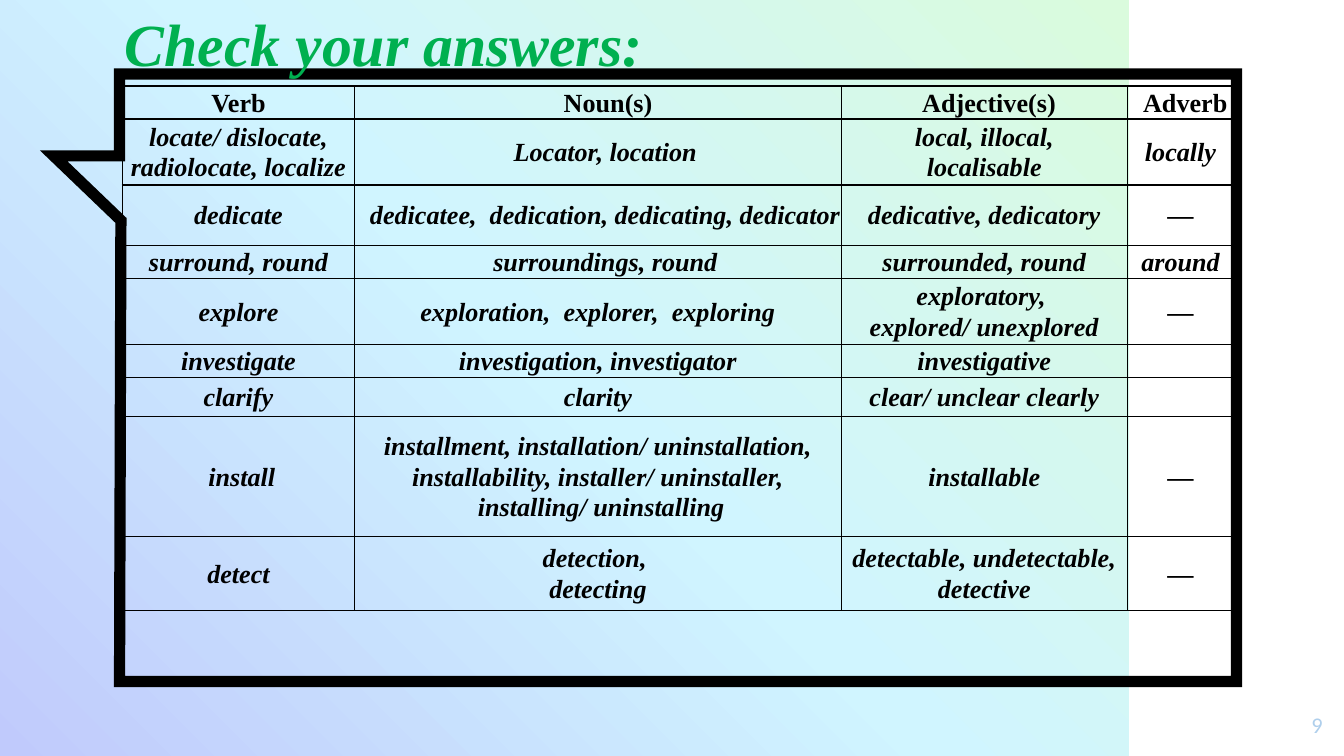
from copy import deepcopy
from dataclasses import dataclass

from lxml.etree import SubElement
from pptx import Presentation
from pptx.dml.color import RGBColor
from pptx.enum.shapes import MSO_SHAPE
from pptx.enum.text import MSO_ANCHOR, MSO_AUTO_SIZE, PP_ALIGN
from pptx.oxml import parse_xml
from pptx.oxml.ns import nsdecls, qn
from pptx.util import Inches, Pt

WIDTH = Inches(10)
HEIGHT = WIDTH * 9 // 16


@dataclass(frozen=True)
class Theme:
    gradient: tuple = ("C0CAFC", "D0F5FF", "DAFBDD")
    ink: str = "000000"
    title: str = "00B050"
    number: str = "AFCFEC"
    serif: str = "Times New Roman"
    sans: str = "Calibri"
    title_size: int = 32
    cell_size: int = 14
    number_size: int = 12
    frame_line: float = 6
    cell_line: float = 0.75


THEME = Theme()


@dataclass(frozen=True)
class Box:
    """A region in percent of the slide's width and height."""
    left: float
    top: float
    width: float
    height: float

    def point(self, x, y):
        return (round(WIDTH * (self.left + x * self.width) / 100),
                round(HEIGHT * (self.top + y * self.height) / 100))

    def frame(self):
        return (*self.point(0, 0),
                round(WIDTH * self.width / 100), round(HEIGHT * self.height / 100))


# Column widths and row heights, as weights within the table's box
COLUMNS = (1.73, 3.62, 2.13, 0.79)
ROWS = (0.24, 0.49, 0.45, 0.24, 0.49, 0.24, 0.29, 0.89, 0.55)
PADDED_ROWS = (7, 8)
INDENTS = {(0, 1): 0.15, (0, 2): 0.07, (0, 3): 0.07,
           (1, 1): 0.11, (2, 1): 0.11, (3, 1): 0.11}
ANSWERS = (
    ("Verb", "Noun(s)", "Adjective(s)", "Adverb"),
    ("locate/ dislocate, radiolocate, localize", "Locator, location",
     "local, illocal,\nlocalisable", "locally"),
    ("dedicate", "dedicatee,  dedication, dedicating, dedicator",
     "dedicative, dedicatory", "—"),
    ("surround, round", "surroundings, round", "surrounded, round", "around"),
    ("explore", "exploration,  explorer,  exploring",
     "exploratory, \nexplored/ unexplored", "—"),
    ("investigate", "investigation, investigator", "investigative", ""),
    ("clarify", "clarity", "clear/ unclear clearly", ""),
    (" install", "installment, installation/ uninstallation, installability, "
     "installer/ uninstaller,\n installing/ uninstalling", "installable", "—"),
    ("detect", "detection, \ndetecting", "detectable, undetectable, detective", "—"),
)


def color(value):
    return RGBColor.from_string(value)


def style(paragraph, face, size, ink, bold=False, italic=False):
    font = paragraph.font
    font.name, font.size = face, Pt(size)
    font.bold, font.italic = bold, italic
    font.color.rgb = color(ink)


def add_backdrop(slide, box):
    shape = slide.shapes.add_shape(MSO_SHAPE.RECTANGLE, *box.frame())
    shape.shadow.inherit = False
    shape.line.fill.background()
    shape.fill.gradient()
    shape.fill.gradient_angle = 45
    # The default gradient has two stops; add one for the middle colour
    stops = shape.fill._fill._gradFill.find(qn("a:gsLst"))
    stops.append(deepcopy(stops[-1]))
    for index, stop in enumerate(shape.fill.gradient_stops):
        stop.position = index / 2
        stop.color.rgb = color(THEME.gradient[index])


def add_callout(slide, box):
    # Corners on a grid of 880 columns and 452 rows
    columns, rows = 880, 452
    body, tail, joint = 49, 61, 109
    corners = ((body, 0), (columns, 0), (columns, rows), (body, rows),
               (body + 1, joint), (0, tail), (body, tail))
    points = [box.point(x / columns, y / rows) for x, y in corners]
    builder = slide.shapes.build_freeform(*points[0])
    builder.add_line_segments(points[1:], close=True)
    shape = builder.convert_to_shape()
    shape.shadow.inherit = False
    shape.fill.background()
    shape.line.width = Pt(THEME.frame_line)
    shape.line.color.rgb = color(THEME.ink)
    SubElement(shape.line._ln, qn("a:miter")).set("lim", "800000")


def add_label(slide, box, text, align, **font):
    frame = slide.shapes.add_textbox(*box.frame()).text_frame
    frame.text = text
    paragraph = frame.paragraphs[0]
    paragraph.alignment = align
    style(paragraph, **font)
    return frame


def add_title(slide, box):
    frame = add_label(slide, box, "Check your answers:", PP_ALIGN.LEFT,
                      face=THEME.serif, size=THEME.title_size,
                      ink=THEME.title, bold=True, italic=True)
    frame.word_wrap = False
    frame.auto_size = MSO_AUTO_SIZE.SHAPE_TO_FIT_TEXT
    frame.vertical_anchor = MSO_ANCHOR.MIDDLE


def add_number(slide, box):
    frame = add_label(slide, box, "9", PP_ALIGN.RIGHT, face=THEME.sans,
                      size=THEME.number_size, ink=THEME.number)
    frame.word_wrap = True
    frame.margin_top = frame.margin_bottom = Inches(0.1)


def add_borders(cell):
    properties = cell._tc.get_or_add_tcPr()
    for index, side in enumerate(("lnL", "lnR", "lnT", "lnB")):
        properties.insert(index, parse_xml(
            f'<a:{side} {nsdecls("a")} w="{Pt(THEME.cell_line)}"><a:solidFill>'
            f'<a:srgbClr val="{THEME.ink}"/></a:solidFill></a:{side}>'))


def fill_cell(cell, text, row, column):
    padded = row in PADDED_ROWS
    cell.margin_left = cell.margin_right = Inches(0.06 if padded else 0)
    cell.margin_top = cell.margin_bottom = Inches(0.03 if padded else 0)
    cell.vertical_anchor = MSO_ANCHOR.MIDDLE
    cell.fill.background()
    add_borders(cell)
    cell.text = text
    for paragraph in cell.text_frame.paragraphs:
        paragraph.alignment = PP_ALIGN.CENTER
        paragraph.line_spacing = 1.05
        style(paragraph, THEME.serif, THEME.cell_size, THEME.ink,
              bold=True, italic=row > 0)
        indent = INDENTS.get((row, column), 0)
        paragraph._p.get_or_add_pPr().set("marL", str(Inches(indent)))


def add_answers(slide, box):
    left, top, width, height = box.frame()
    table = slide.shapes.add_table(
        len(ROWS), len(COLUMNS), left, top, width, height).table
    table.first_row = table.horz_banding = False
    for column, weight in zip(table.columns, COLUMNS):
        column.width = round(width * weight / sum(COLUMNS))
    for row, weight in zip(table.rows, ROWS):
        row.height = round(height * weight / sum(ROWS))
    for row, texts in enumerate(ANSWERS):
        for column, text in enumerate(texts):
            fill_cell(table.cell(row, column), text, row, column)


def main():
    presentation = Presentation()
    presentation.slide_width, presentation.slide_height = WIDTH, HEIGHT
    slide = presentation.slides.add_slide(presentation.slide_layouts[6])

    # Background and frame
    add_backdrop(slide, Box(0, 0, 84, 100))
    add_callout(slide, Box(4, 9.78, 88, 80.36))

    # Slide number and title
    add_number(slide, Box(93.4, 92.3, 6, 7.64))
    add_title(slide, Box(8.3, 0, 41, 11.38))

    # Answer table
    add_answers(slide, Box(9.1, 11.38, 82.7, 69.16))
    presentation.save("out.pptx")


if __name__ == "__main__":
    main()
